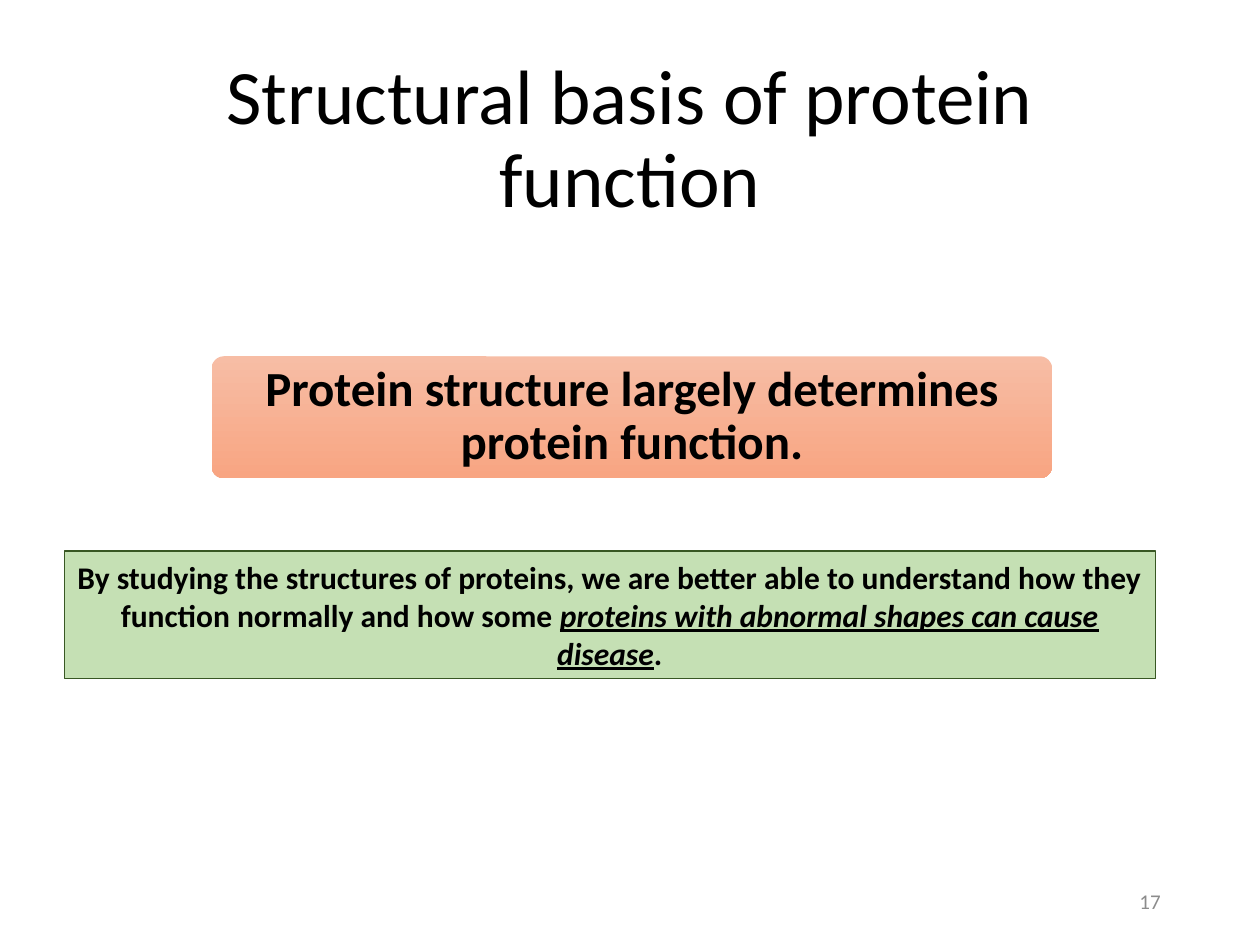
from pptx import Presentation
from pptx.dml.color import RGBColor as RGB
from pptx.enum.shapes import MSO_SHAPE as SHAPE
from pptx.enum.text import MSO_ANCHOR as ANCHOR, PP_ALIGN as ALIGN
from pptx.util import Inches, Pt

W, H = 10, 7.5
FONT = "Calibri"
COLORS = {
    "text": "000000", "number": "8C8C8C",
    "claim_top": "F7BDA5", "claim_bottom": "F8A582",
    "note": "C5E0B4", "note_line": "385723",
}


def color(name):
    return RGB.from_string(COLORS[name])


def place(box):
    """Turn shares of the slide's size into lengths."""
    x, y, w, h = box
    return Inches(x * W), Inches(y * H), Inches(w * W), Inches(h * H)


def write(s, runs, size, name="text", align=ALIGN.CENTER, spacing=None,
          bold=False, inset=None):
    """Write one paragraph; each run is (text, emphasised)."""
    tf = s.text_frame
    tf.word_wrap = True
    tf.vertical_anchor = ANCHOR.MIDDLE
    if inset:
        tf.margin_left = tf.margin_right = Inches(inset)
        tf.margin_top = tf.margin_bottom = Inches(inset)
    p = tf.paragraphs[0]
    p.alignment = align
    if spacing:
        p.line_spacing = spacing
    for text, emphasised in runs:
        r = p.add_run()
        r.text = text
        r.font.name, r.font.size, r.font.bold = FONT, Pt(size), bold
        r.font.color.rgb = color(name)
        if emphasised:
            r.font.italic = r.font.underline = True


def add_title(slide, box):
    s = slide.shapes.add_textbox(*place(box))
    write(s, [("Structural basis of protein function", False)], 44, spacing=0.9)


def add_claim(slide, box):
    s = slide.shapes.add_shape(SHAPE.ROUNDED_RECTANGLE, *place(box))
    s.shadow.inherit = False
    s.adjustments[0] = 0.1
    s.line.fill.background()
    # Gradient from top to bottom
    s.fill.gradient()
    s.fill.gradient_angle = 270
    for stop, name in zip(s.fill.gradient_stops, ("claim_top", "claim_bottom")):
        stop.color.rgb = color(name)
    write(s, [("Protein structure largely determines protein function.", False)],
          28, spacing=0.9, bold=True, inset=0.15)


def add_note(slide, box):
    s = slide.shapes.add_shape(SHAPE.RECTANGLE, *place(box))
    s.shadow.inherit = False
    s.fill.solid()
    s.fill.fore_color.rgb = color("note")
    s.line.color.rgb = color("note_line")
    s.line.width = Pt(0.75)
    write(s, [
        ("By studying the structures of proteins, we are better able to "
         "understand how they function normally and how some ", False),
        ("proteins with abnormal shapes can cause disease", True),
        (".", False),
    ], 18, bold=True)


def add_number(slide, box):
    s = slide.shapes.add_textbox(*place(box))
    write(s, [("17", False)], 12, "number", ALIGN.RIGHT)


def main():
    prs = Presentation()
    prs.slide_width, prs.slide_height = Inches(W), Inches(H)
    slide = prs.slides.add_slide(prs.slide_layouts[6])
    # Boxes are left, top, width, height as shares of the slide
    add_title(slide, (0.069, 0.053, 0.862, 0.193))
    add_claim(slide, (0.168, 0.377, 0.667, 0.129))
    add_number(slide, (0.706, 0.927, 0.225, 0.053))
    add_note(slide, (0.051, 0.583, 0.866, 0.135))
    prs.save("out.pptx")


if __name__ == "__main__":
    main()
